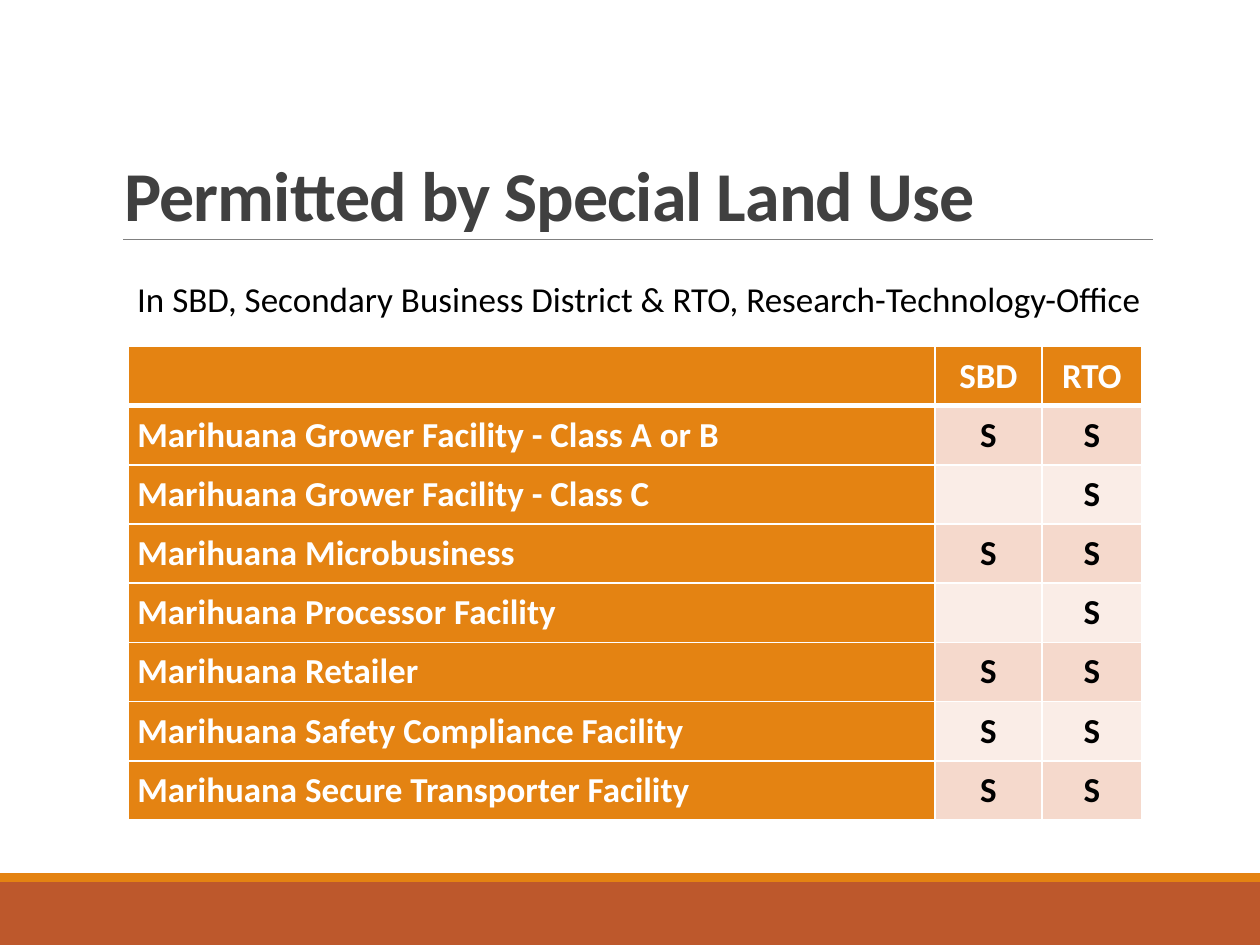
import pptx
import pptx.dml.color
import pptx.enum.shapes
import pptx.enum.text
import pptx.oxml
import pptx.oxml.ns
import pptx.util
from lxml import etree

Inches, Pt = pptx.util.Inches, pptx.util.Pt
ANCHOR, ALIGN = pptx.enum.text.MSO_ANCHOR, pptx.enum.text.PP_ALIGN

TITLE = "Permitted by Special Land Use"
SUBTITLE = "In SBD, Secondary Business District & RTO, Research-Technology-Office"
ROWS = [
    ("", "SBD", "RTO"),
    ("Marihuana Grower Facility - Class A or B", "S", "S"),
    ("Marihuana Grower Facility - Class C", "", "S"),
    ("Marihuana Microbusiness", "S", "S"),
    ("Marihuana Processor Facility", "", "S"),
    ("Marihuana Retailer", "S", "S"),
    ("Marihuana Safety Compliance Facility", "S", "S"),
    ("Marihuana Secure Transporter Facility", "S", "S"),
]
COLUMN_WIDTHS = [6.4, 0.85, 0.79]
ROW_HEIGHT = 0.47
ORANGE, RUST, WHITE, BLACK = "E48312", "BD582C", "FFFFFF", "000000"
BANDS = ["FAEDE7", "F5D9CC"]
FOOTER_BARS = [(7, 0.5, RUST), (6.93, 0.07, ORANGE)]


def color(value):
    return pptx.dml.color.RGBColor.from_string(value)


def style_font(font, size, value, bold=False):
    font.name = "Calibri"
    font.size = Pt(size)
    font.bold = bold
    font.color.rgb = color(value)


def add_bar(slide, top, height, fill):
    bar = slide.shapes.add_shape(pptx.enum.shapes.MSO_SHAPE.RECTANGLE,
                                 0, Inches(top), Inches(10), Inches(height))
    bar.shadow.inherit = False
    bar.fill.solid()
    bar.fill.fore_color.rgb = color(fill)
    bar.line.fill.background()


def add_rule(slide):
    """Thin grey line under the title."""
    rule = slide.shapes.add_connector(pptx.enum.shapes.MSO_CONNECTOR.STRAIGHT,
                                      Inches(0.98), Inches(1.9), Inches(9.15), Inches(1.9))
    rule.line.color.rgb = color("808080")
    rule.line.width = Pt(0.5)
    properties = rule.element.find(pptx.oxml.ns.qn("p:spPr"))
    etree.SubElement(properties, pptx.oxml.ns.qn("a:effectLst"))


def add_text(slide, text, box, anchor, spacing):
    """Add a one-paragraph text box and return its run."""
    frame = slide.shapes.add_textbox(*map(Inches, box)).text_frame
    frame.word_wrap = True
    frame.vertical_anchor = anchor
    frame.text = text
    frame.paragraphs[0].line_spacing = spacing
    return frame.paragraphs[0].runs[0]


def set_borders(cell, widths):
    """Draw white cell borders; widths maps L, R, T, B to points."""
    properties = cell._tc.get_or_add_tcPr()
    for side, width in widths.items():
        properties.append(pptx.oxml.parse_xml(
            f'<a:ln{side} {pptx.oxml.ns.nsdecls("a")} w="{Pt(width)}">'
            f'<a:solidFill><a:srgbClr val="{WHITE}"/></a:solidFill></a:ln{side}>'))


def fill_cell(cell, text, row, column):
    set_borders(cell, {"L": 1, "R": 1, "T": 3 if row == 1 else 1, "B": 3 if row == 0 else 1})
    heading = row == 0 or column == 0
    cell.fill.solid()
    cell.fill.fore_color.rgb = color(ORANGE if heading else BANDS[row % 2])
    cell.vertical_anchor = ANCHOR.MIDDLE
    cell.margin_left = cell.margin_right = Inches(0.07)
    cell.margin_top = cell.margin_bottom = 0
    cell.text_frame.text = text
    paragraph = cell.text_frame.paragraphs[0]
    paragraph.alignment = ALIGN.CENTER if column else ALIGN.LEFT
    for run in paragraph.runs:
        style_font(run.font, 20, WHITE if heading else BLACK, bold=True)


def add_use_table(slide):
    table = slide.shapes.add_table(
        len(ROWS), len(COLUMN_WIDTHS), Inches(1.02), Inches(2.75),
        Inches(sum(COLUMN_WIDTHS)), Inches(ROW_HEIGHT * len(ROWS))).table
    for column, width in zip(table.columns, COLUMN_WIDTHS):
        column.width = Inches(width)
    for row, texts in enumerate(ROWS):
        table.rows[row].height = Inches(ROW_HEIGHT)
        for column, text in enumerate(texts):
            fill_cell(table.cell(row, column), text, row, column)


def main():
    presentation = pptx.Presentation()
    presentation.slide_width, presentation.slide_height = Inches(10), Inches(7.5)
    slide = presentation.slides.add_slide(presentation.slide_layouts[6])
    for bar in FOOTER_BARS:
        add_bar(slide, *bar)
    add_rule(slide)
    title = add_text(slide, TITLE, (0.89, 0.42, 8.3, 1.5), ANCHOR.BOTTOM, 0.85)
    style_font(title.font, 40, "404040", bold=True)
    title.font._element.set("spc", "-50")
    subtitle = add_text(slide, SUBTITLE, (0.99, 2.12, 8.38, 0.5), ANCHOR.TOP, 1.1)
    style_font(subtitle.font, 20, BLACK)
    add_use_table(slide)
    presentation.save("out.pptx")


if __name__ == "__main__":
    main()
